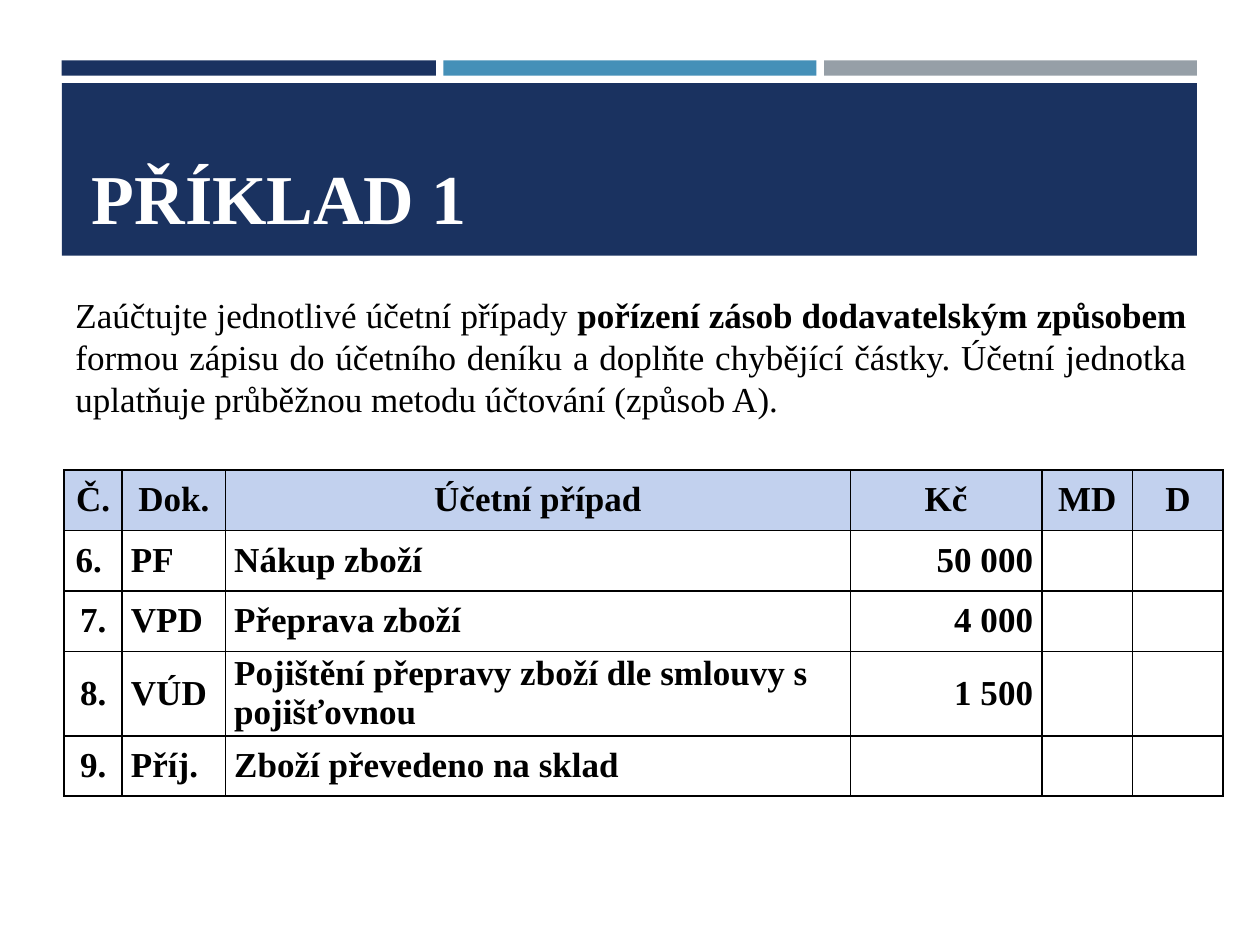
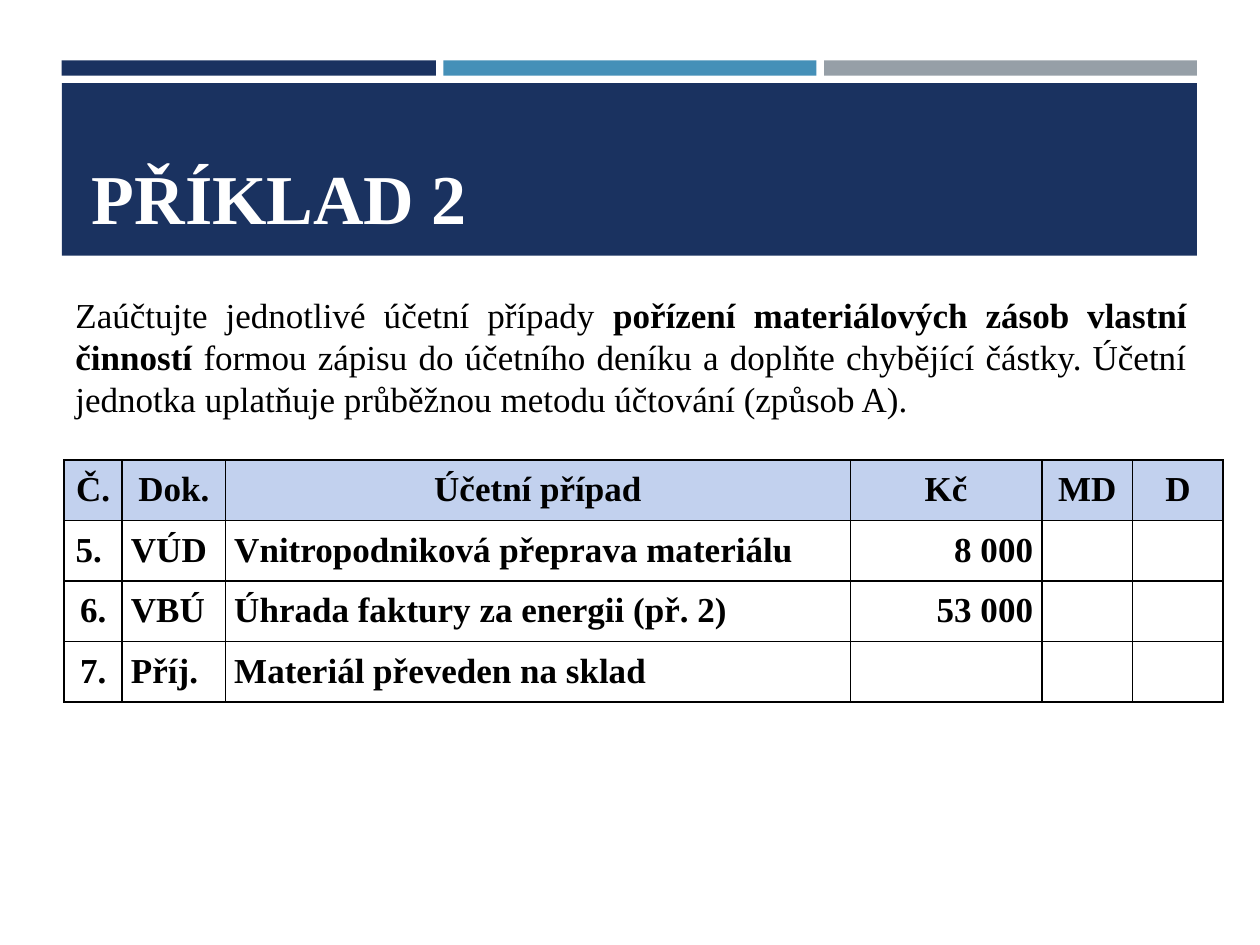
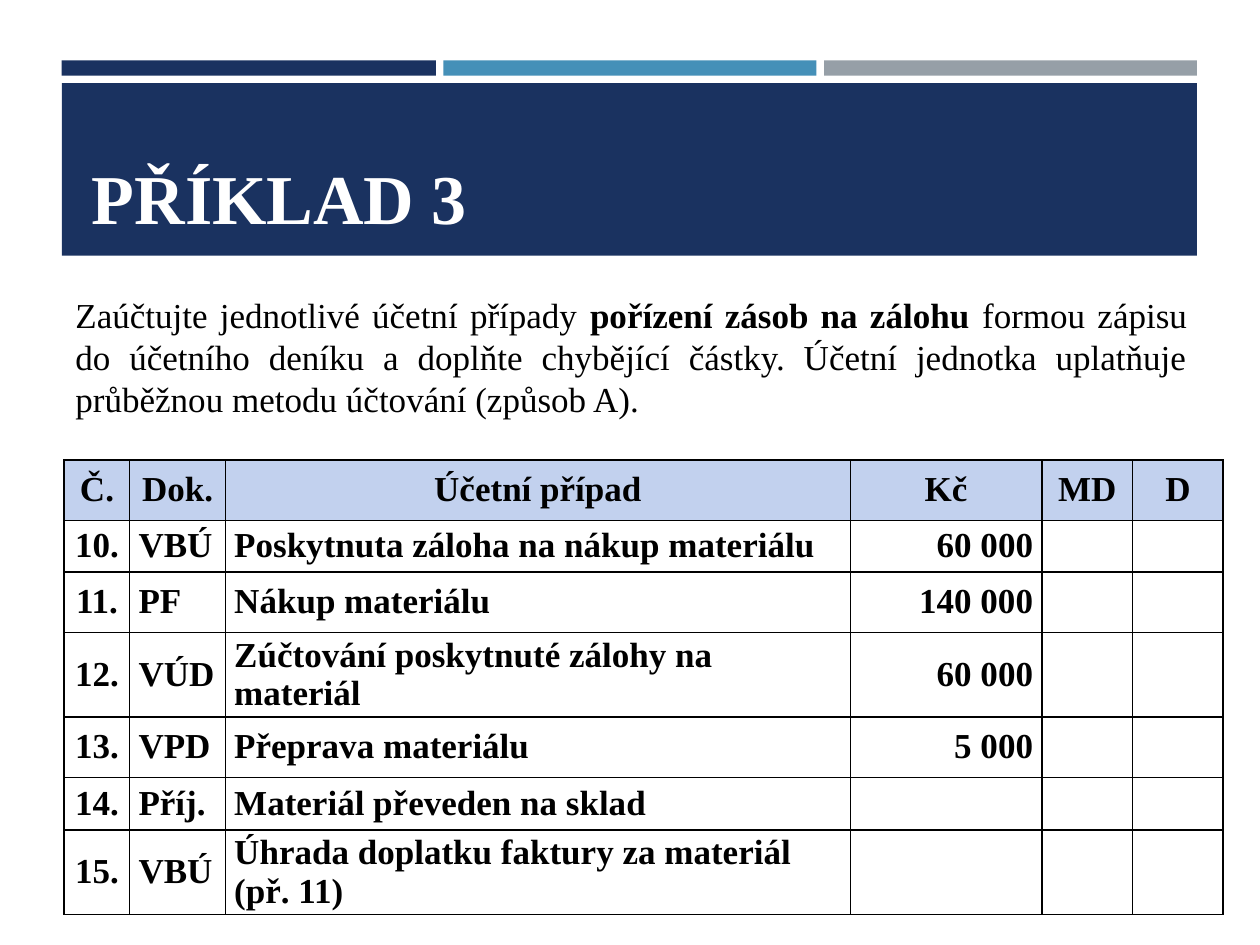
"""Builds three accounting exercise slides with a shared banner and journal tables."""
from lxml.etree import SubElement
from pptx import Presentation
from pptx.dml.color import RGBColor
from pptx.enum.shapes import MSO_SHAPE
from pptx.enum.text import MSO_ANCHOR, PP_ALIGN
from pptx.oxml.ns import qn
from pptx.util import Inches, Pt

COLORS = {
    "navy": "1A3260",
    "blue": "4590B8",
    "gray": "969FA7",
    "header": "C2D1EE",
    "black": "000000",
    "white": "FFFFFF",
}
FONT = "Times New Roman"
BANDS = [
    (0.49, 0.48, 2.97, 0.12, "navy"),
    (3.52, 0.48, 2.96, 0.12, "blue"),
    (6.54, 0.48, 2.96, 0.12, "gray"),
    (0.49, 0.66, 9.01, 1.37, "navy"),
]
HEADERS = ["Č.", "Dok.", "Účetní případ", "Kč", "MD", "D"]
ALIGNMENTS = [PP_ALIGN.CENTER, PP_ALIGN.LEFT, PP_ALIGN.LEFT, PP_ALIGN.RIGHT, PP_ALIGN.CENTER, PP_ALIGN.CENTER]
INTRO = "Zaúčtujte jednotlivé účetní případy "
TASK = (
    "formou zápisu do účetního deníku a doplňte chybějící částky. "
    "Účetní jednotka uplatňuje průběžnou metodu účtování (způsob A)."
)
EXERCISES = [
    {
        "title": "PŘÍKLAD 1",
        "topic": "pořízení zásob dodavatelským způsobem ",
        "top": 3.73,
        "number_widths": [0.46, 0.82],
        "heights": [0.48, 0.48, 0.48, 0.67, 0.48],
        "entries": [
            ["6. ", "PF", "Nákup zboží", "50 000"],
            ["7.", "VPD", "Přeprava zboží", "4 000"],
            ["8.", "VÚD", "Pojištění přepravy zboží dle smlouvy s pojišťovnou", "1 500"],
            ["9.", "Příj.", "Zboží převedeno na sklad", ""],
        ],
    },
    {
        "title": "PŘÍKLAD 2",
        "topic": "pořízení materiálových zásob vlastní činností ",
        "top": 3.65,
        "number_widths": [0.46, 0.82],
        "heights": [0.48] * 4,
        "entries": [
            ["5. ", "VÚD", "Vnitropodniková přeprava materiálu", "8 000"],
            ["6.", "VBÚ", "Úhrada faktury za energii (př. 2)", "53 000"],
            ["7.", "Příj.", "Materiál převeden na sklad", ""],
        ],
    },
    {
        "title": "PŘÍKLAD 3",
        "topic": "pořízení zásob na zálohu ",
        "top": 3.65,
        "number_widths": [0.52, 0.76],
        "heights": [0.48, 0.41, 0.48, 0.67, 0.48, 0.42, 0.67],
        "entries": [
            ["10.", "VBÚ", "Poskytnuta záloha na nákup materiálu", "60 000"],
            ["11.", "PF", "Nákup materiálu", "140 000"],
            ["12.", "VÚD", "Zúčtování poskytnuté zálohy na materiál", "60 000"],
            ["13.", "VPD", "Přeprava materiálu", "5 000"],
            ["14.", "Příj.", "Materiál převeden na sklad", ""],
            ["15.", "VBÚ", "Úhrada doplatku faktury za materiál (př. 11)", ""],
        ],
    },
]


def add_run(paragraph, text, size=20, bold=False, color="black"):
    run = paragraph.add_run()
    run.text = text
    run.font.name = FONT
    run.font.size = Pt(size)
    run.font.bold = bold
    run.font.color.rgb = RGBColor.from_string(COLORS[color])


def add_borders(cell):
    properties = cell._tc.get_or_add_tcPr()
    for side in ("a:lnL", "a:lnR", "a:lnT", "a:lnB"):
        line = SubElement(properties, qn(side), w=str(Pt(1)))
        fill = SubElement(line, qn("a:solidFill"))
        SubElement(fill, qn("a:srgbClr"), val=COLORS["black"])


presentation = Presentation()
presentation.slide_width = Inches(10)
presentation.slide_height = Inches(7.5)
layout = presentation.slide_layouts[5]
layout_title = layout.placeholders[0]
layout_title.left, layout_title.top = Inches(0.63), Inches(0.76)
layout_title.width, layout_title.height = Inches(8.74), Inches(1.18)

for exercise in EXERCISES:
    slide = presentation.slides.add_slide(layout)
    if exercise is EXERCISES[0]:
        for index, (left, top, width, height, color) in enumerate(BANDS):
            shape = slide.shapes.add_shape(
                MSO_SHAPE.RECTANGLE, Inches(left), Inches(top), Inches(width), Inches(height)
            )
            shape.shadow.inherit = False
            shape.fill.solid()
            shape.fill.fore_color.rgb = RGBColor.from_string(COLORS[color])
            shape.line.fill.background()
            shape.element.nvSpPr.cNvPr.set("id", str(20 + index))
            layout.shapes.element.insert(2 + index, shape.element)

    title = slide.shapes.title
    title.text_frame.vertical_anchor = MSO_ANCHOR.BOTTOM
    paragraph = title.text_frame.paragraphs[0]
    paragraph.alignment = PP_ALIGN.LEFT
    add_run(paragraph, exercise["title"], 40, True, "white")

    assignment = slide.shapes.add_textbox(Inches(0.5), Inches(2.28), Inches(9.02), Inches(1.11))
    assignment.text_frame.word_wrap = True
    paragraph = assignment.text_frame.paragraphs[0]
    paragraph.alignment = PP_ALIGN.JUSTIFY
    add_run(paragraph, INTRO)
    add_run(paragraph, exercise["topic"], bold=True)
    add_run(paragraph, TASK)

    rows = [HEADERS] + [entry + ["", ""] for entry in exercise["entries"]]
    heights = exercise["heights"]
    journal = slide.shapes.add_table(
        len(rows), len(HEADERS), Inches(0.51), Inches(exercise["top"]), Inches(9.2), Inches(sum(heights))
    ).table
    journal.first_row = False
    journal.horz_banding = False
    for column, width in zip(journal.columns, exercise["number_widths"] + [4.96, 1.52, 0.72, 0.72]):
        column.width = Inches(width)
    for row_index, (values, height) in enumerate(zip(rows, heights)):
        journal.rows[row_index].height = Inches(height)
        for column_index, text in enumerate(values):
            cell = journal.cell(row_index, column_index)
            cell.margin_left = cell.margin_right = Inches(0.07)
            cell.margin_top = cell.margin_bottom = 0
            cell.vertical_anchor = MSO_ANCHOR.MIDDLE
            add_borders(cell)
            if row_index == 0:
                cell.fill.solid()
                cell.fill.fore_color.rgb = RGBColor.from_string(COLORS["header"])
            else:
                cell.fill.background()
            paragraph = cell.text_frame.paragraphs[0]
            paragraph.alignment = PP_ALIGN.CENTER if row_index == 0 else ALIGNMENTS[column_index]
            paragraph.line_spacing = 0.99
            if text:
                add_run(paragraph, text, bold=True)

presentation.save("out.pptx")
